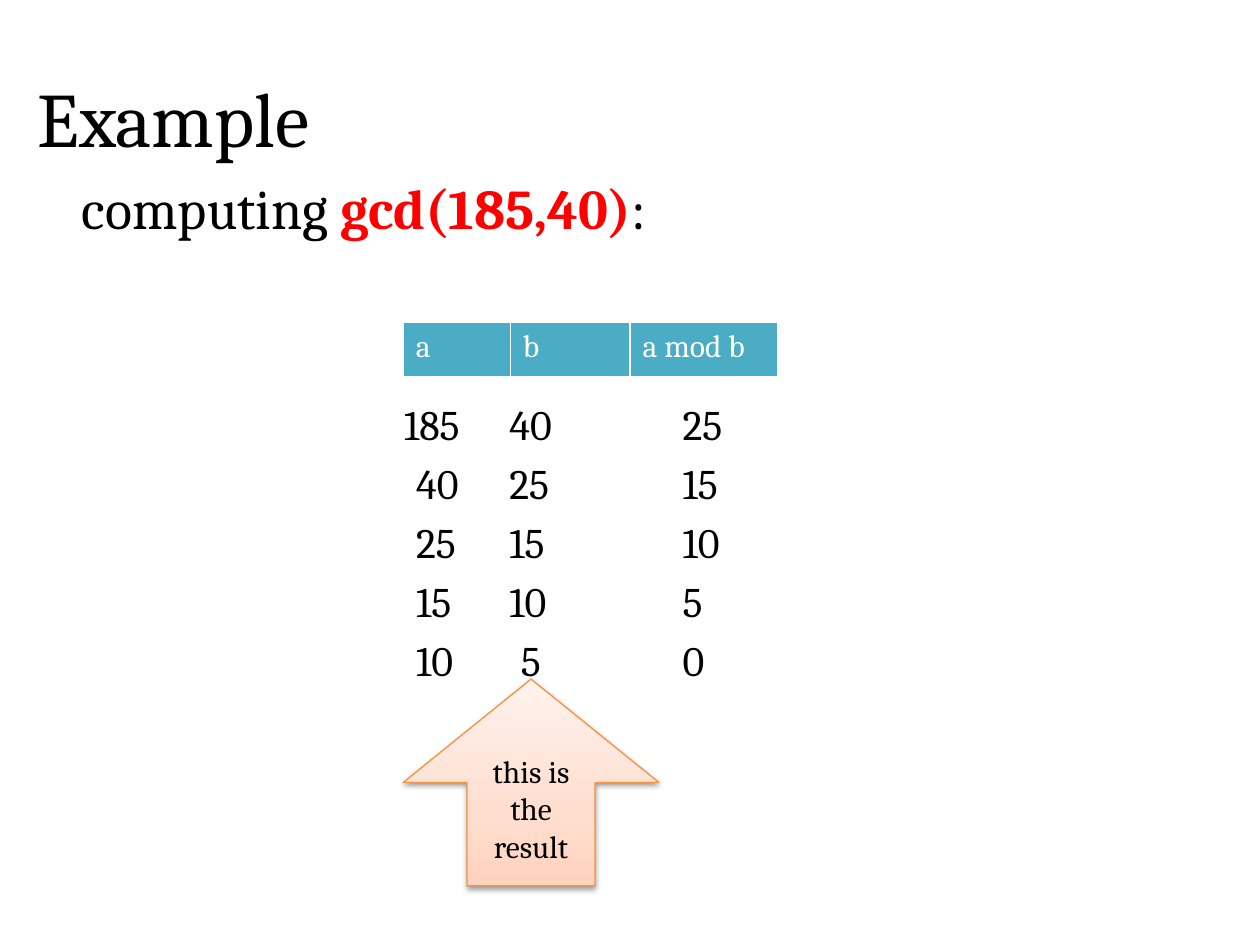
from lxml.etree import SubElement
from pptx import Presentation
from pptx.dml.color import RGBColor
from pptx.enum.shapes import MSO_SHAPE as SHAPE
from pptx.enum.text import MSO_ANCHOR as ANCHOR, MSO_AUTO_SIZE as AUTO, PP_ALIGN as ALIGN
from pptx.oxml import parse_xml
from pptx.oxml.ns import nsdecls, qn
from pptx.util import Inches, Pt

FONT = "Cambria"
COLORS = {
    "text": "000000", "accent": "FF0000", "white": "FFFFFF", "header": "4BACC6",
    "arrow_line": "F69240", "arrow_dark": "FFD2BD", "arrow_mid": "FFDED0",
    "arrow_light": "FFF2ED", "shadow": "000000",
}
HEADERS = ["a", "b", "a mod b"]
HEADER_WIDTHS = [0.85, 0.95, 1.17]
STEPS = [(185, 40, 25), (40, 25, 15), (25, 15, 10), (15, 10, 5), (10, 5, 0)]
TABLE_LEFT, TABLE_TOP, HEADER_HEIGHT = 3.2, 2.56, 0.44
ROW_TOP, ROW_PITCH, ROW_HEIGHT = 3.11, 0.47, 0.5
A_CENTER, B_CENTER, MOD_LEFT = 3.49, 4.23, 5.32
NUMBER_WIDTHS = {1: 0.39, 2: 0.57, 3: 0.76}


def rgb(name):
    return RGBColor.from_string(COLORS[name])


def inches(*values):
    return [Inches(v) for v in values]


def add_text(p, text, size=24, color="text", bold=False, align=None):
    if align is not None:
        p.alignment = align
    r = p.add_run()
    r.text = text
    r.font.name, r.font.size, r.font.bold = FONT, Pt(size), bold
    r.font.color.rgb = rgb(color)


def place(s, left, top, width, height):
    s.left, s.top, s.width, s.height = inches(left, top, width, height)


def add_title(slide, text):
    title = slide.shapes.title
    place(title, 0.2, 0.3, 9.3, 1.25)
    title.text_frame.vertical_anchor = ANCHOR.MIDDLE
    add_text(title.text_frame.paragraphs[0], text, size=44, align=ALIGN.LEFT)


def add_body(slide):
    body = slide.placeholders[1]
    place(body, 0.55, 1.33, 9, 0.98)
    p = body.text_frame.paragraphs[0]
    pPr = p._p.get_or_add_pPr()
    pPr.set("marL", str(Inches(0.38)))
    pPr.set("indent", str(-Inches(0.38)))
    SubElement(pPr, qn("a:buNone"))
    add_text(p, "computing ", size=32)
    add_text(p, "gcd(185,40)", size=32, color="accent", bold=True)
    add_text(p, ":", size=32)


def set_borders(cell):
    tcPr = cell._tc.get_or_add_tcPr()
    for i, (side, width) in enumerate([("L", 1), ("R", 1), ("T", 1), ("B", 3)]):
        tcPr.insert(i, parse_xml(
            f'<a:ln{side} {nsdecls("a")} w="{Pt(width)}"><a:solidFill>'
            f'<a:srgbClr val="{COLORS["white"]}"/></a:solidFill></a:ln{side}>'))


def add_header_table(slide):
    table = slide.shapes.add_table(1, len(HEADERS), *inches(
        TABLE_LEFT, TABLE_TOP, sum(HEADER_WIDTHS), HEADER_HEIGHT)).table
    for column, width, cell, text in zip(
            table.columns, HEADER_WIDTHS, table.rows[0].cells, HEADERS):
        column.width = Inches(width)
        cell.fill.solid()
        cell.fill.fore_color.rgb = rgb("header")
        set_borders(cell)
        add_text(cell.text_frame.paragraphs[0], text, size=18, color="white")


def add_number(slide, value, top, center=None, left=None):
    """Place a number by its centre or by its left edge."""
    width = NUMBER_WIDTHS[len(str(value))]
    if left is None:
        left = center - width / 2
    tf = slide.shapes.add_textbox(*inches(left, top, width, ROW_HEIGHT)).text_frame
    tf.word_wrap = False
    tf.auto_size = AUTO.SHAPE_TO_FIT_TEXT
    add_text(tf.paragraphs[0], str(value))


def add_steps(slide):
    for i, (a, b, mod) in enumerate(STEPS):
        top = ROW_TOP + i * ROW_PITCH
        add_number(slide, a, top, center=A_CENTER)
        add_number(slide, b, top, center=B_CENTER)
        add_number(slide, mod, top, left=MOD_LEFT)


def set_gradient(s, stops):
    """Shade the shape from bottom to top with (percent, colour) stops."""
    s.fill.gradient()
    s.fill.gradient_angle = 90
    gsLst = s._element.spPr.find(".//" + qn("a:gsLst"))
    for gs in list(gsLst):
        gsLst.remove(gs)
    for percent, color in stops:
        gs = SubElement(gsLst, qn("a:gs"), pos=str(percent * 1000))
        SubElement(gs, qn("a:srgbClr"), val=COLORS[color])


def set_shadow(s):
    s.shadow.inherit = False
    s._element.spPr.find(qn("a:effectLst")).append(parse_xml(
        f'<a:outerShdw {nsdecls("a")} blurRad="{Pt(3.1)}" dist="{Pt(1.6)}" '
        f'dir="5400000" rotWithShape="0"><a:srgbClr val="{COLORS["shadow"]}">'
        '<a:alpha val="38000"/></a:srgbClr></a:outerShdw>'))


def add_result_arrow(slide, text):
    s = slide.shapes.add_shape(SHAPE.UP_ARROW, *inches(TABLE_LEFT, 5.39, 2.03, 1.64))
    set_gradient(s, [(0, "arrow_dark"), (35, "arrow_mid"), (100, "arrow_light")])
    s.line.color.rgb = rgb("arrow_line")
    s.line.width = Pt(0.75)
    set_shadow(s)
    tf = s.text_frame
    tf.word_wrap = True
    tf.vertical_anchor = ANCHOR.MIDDLE
    add_text(tf.paragraphs[0], text, size=18, align=ALIGN.CENTER)


def main():
    prs = Presentation()
    prs.slide_width, prs.slide_height = inches(10, 7.5)
    slide = prs.slides.add_slide(prs.slide_layouts[1])
    add_title(slide, "Example")
    add_body(slide)
    add_header_table(slide)
    add_steps(slide)
    add_result_arrow(slide, "this is the result")
    prs.save("out.pptx")


if __name__ == "__main__":
    main()
